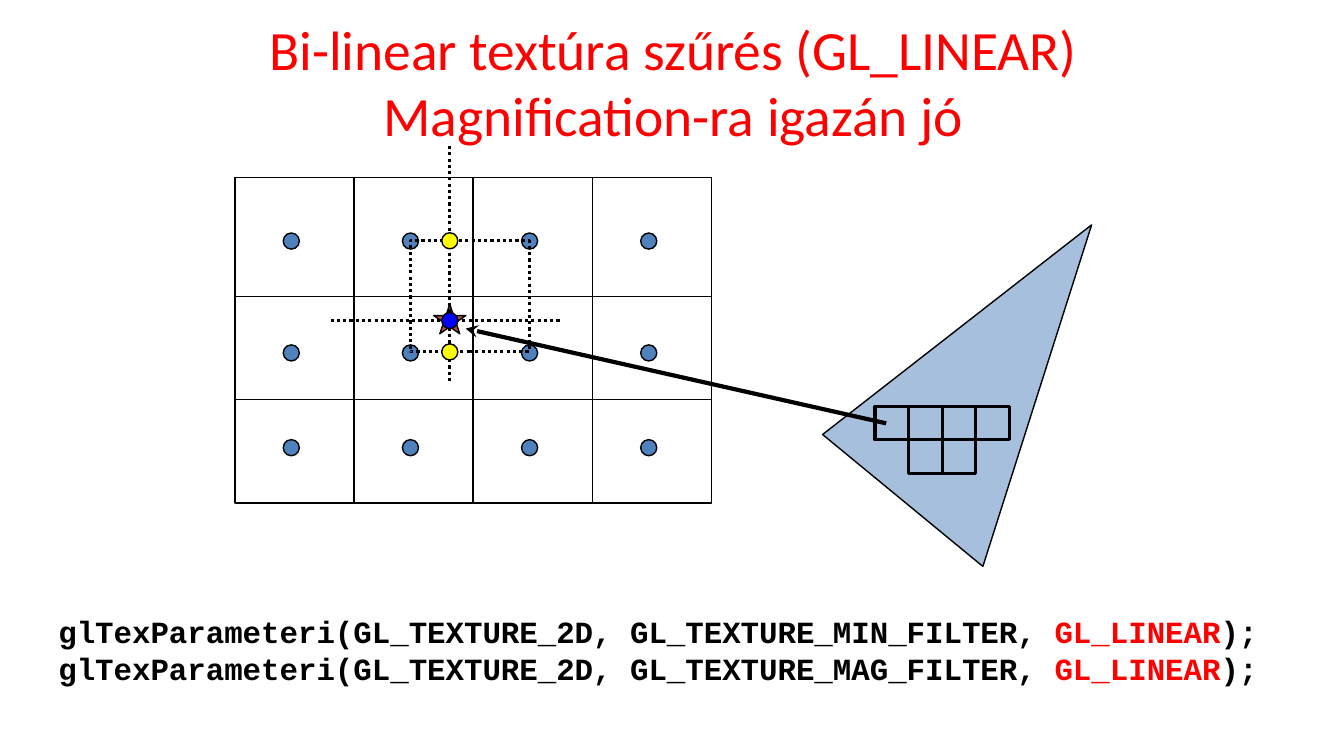
from lxml import etree
from pptx import Presentation
from pptx import util as u
from pptx.dml import color
from pptx.enum import dml, shapes, text
from pptx.oxml import ns

Pt = u.Pt
KIND = shapes.MSO_SHAPE
BLUE, BLACK, RED, YELLOW = "4F81BD", "000000", "FF0000", "FFFF01"
DOT = 11.5


def paint(fill, tone=None):
    """Give a fill a solid colour, or none."""
    if tone:
        fill.solid()
        fill.fore_color.rgb = color.RGBColor.from_string(tone)
    else:
        fill.background()


def put(item, **values):
    """Set each given attribute on an item."""
    for name, value in values.items():
        setattr(item, name, value)


def stroke(line, width, dash=None):
    """Draw a black line of the given width in points."""
    paint(line.fill, BLACK)
    put(line, width=Pt(width), dash_style=dash)


def shape(slide, kind, box, tone=None, width=1, dash=None):
    """Add an outlined preset shape."""
    part = slide.shapes.add_shape(kind, *map(Pt, box))
    part.shadow.inherit = False
    paint(part.fill, tone)
    stroke(part.line, width, dash)


def dot(slide, x, y, tone):
    """Add a round mark centred on a point."""
    shape(slide, KIND.OVAL, (x - DOT / 2, y - DOT / 2, DOT, DOT), tone)


def link(slide, start, end, width, dash=None):
    """Add a straight line between two points."""
    line = slide.shapes.add_connector(
        shapes.MSO_CONNECTOR.STRAIGHT, *map(Pt, (*start, *end)))
    stroke(line.line, width, dash)
    etree.SubElement(line._element.spPr, ns.qn("a:effectLst"))
    return line


def title(slide, box, words):
    """Fill and place the title."""
    head = slide.shapes.title
    put(head, **dict(zip(("left", "top", "width", "height"), map(Pt, box))))
    frame = head.text_frame
    frame.text = words
    put(frame, auto_size=text.MSO_AUTO_SIZE.NONE, word_wrap=True,
        vertical_anchor=text.MSO_ANCHOR.MIDDLE)
    para = frame.paragraphs[0]
    para.alignment = text.PP_ALIGN.CENTER
    for run in para.runs:
        put(run.font, name="Calibri", size=Pt(39.6))
        paint(run.font.fill, RED)


def texels(slide, box):
    """Draw the texture grid with a dot in every cell."""
    left, top, width, height = box
    step = width / 4
    for col in range(4):
        shape(slide, KIND.RECTANGLE, (left + col * step, top, step, height))
    shape(slide, KIND.RECTANGLE, (left, top + 85, width, 73.6))
    for y in (45.4, 125.3, 193):
        for col in range(4):
            dot(slide, left + 40.3 + col * step, top + y, BLUE)
    shape(slide, KIND.STAR_5_POINT, (left + 142, top + 90.6, 23, 21), "C0504D")


def code(slide, box, names):
    """Write one filter call per name."""
    frame = slide.shapes.add_textbox(*map(Pt, box)).text_frame
    frame.word_wrap = True
    for row, name in enumerate(names):
        para = frame.add_paragraph() if row else frame.paragraphs[0]
        for words, tone in (
                (f"glTexParameteri(GL_TEXTURE_2D, {name}, ", BLACK),
                ("GL_LINEAR", RED), (");", BLACK)):
            run = para.add_run()
            run.text = words
            put(run.font, name="Courier New", size=Pt(22), bold=True)
            paint(run.font.fill, tone)


def patch(slide, box):
    """Draw the see-through triangle and its pixels."""
    left, top, width, height = box
    path = slide.shapes.build_freeform(Pt(left + 114.5), Pt(top + height))
    path.add_line_segments([(Pt(left), Pt(top + 149.8)),
                            (Pt(left + width), Pt(top))])
    face = path.convert_to_shape()
    face.shadow.inherit = False
    paint(face.fill, BLUE)
    tint = face._element.spPr.find(".//" + ns.qn("a:srgbClr"))
    etree.SubElement(tint, ns.qn("a:alpha"), val="50000")
    stroke(face.line, 1)
    side = 24
    for row, cols in enumerate((range(4), (1, 2))):
        for col in cols:
            shape(slide, KIND.RECTANGLE,
                  (left + 37.4 + col * side, top + 129.6 + row * side,
                   side, side), width=2.25)


def arrow(slide, start, end):
    """Point from a pixel to its texture sample."""
    line = link(slide, start, end, 3)
    etree.SubElement(line.line._get_or_add_ln(), ns.qn("a:tailEnd"),
                     type="stealth")


def sample(slide, box):
    """Draw the dotted guides and the blended points."""
    left, top, width, height = box
    x, y = left + 28.3, top + 57
    dash = dml.MSO_LINE.ROUND_DOT
    link(slide, (x, top - 67.7), (x, top + 102.3), 2.25, dash)
    link(slide, (left - 56.8, y), (left + 107.3, y), 2.25, dash)
    shape(slide, KIND.RECTANGLE, box, width=2.25, dash=dash)
    for level, tone in ((top, YELLOW), (top + height, YELLOW), (y, "0000FF")):
        dot(slide, x, level, tone)


def main():
    """Build and save the slide."""
    deck = Presentation()
    put(deck, slide_width=Pt(960), slide_height=Pt(540))
    slide = deck.slides.add_slide(deck.slide_layouts[5])
    title(slide, (138, 13, 686, 90),
          "Bi-linear textúra szűrés (GL_LINEAR)\vMagnification-ra igazán jó")
    texels(slide, (167.8, 126.8, 340.4, 232.5))
    code(slide, (34.6, 434.2, 925, 60.5),
         ("GL_TEXTURE_MIN_FILTER", "GL_TEXTURE_MAG_FILTER"))
    patch(slide, (587.6, 160.6, 192.2, 244))
    arrow(slide, (633, 302.4), (332.6, 234.7))
    sample(slide, (293, 172, 85, 79.4))
    deck.save("out.pptx")


if __name__ == "__main__":
    main()
